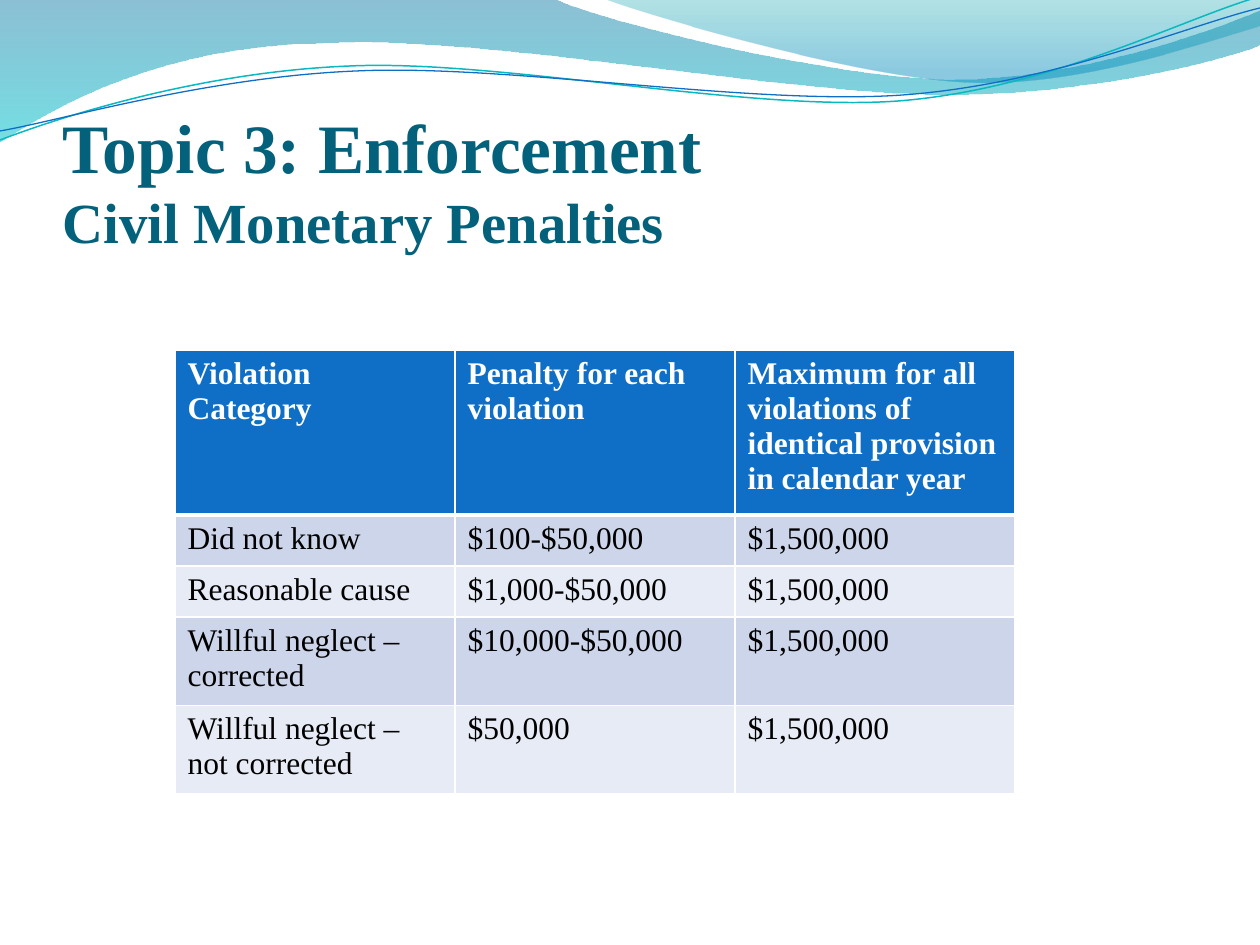
import pptx
import pptx.dml.color
import pptx.enum.text
import pptx.oxml
import pptx.oxml.ns
import pptx.util

RGBColor = pptx.dml.color.RGBColor
qn = pptx.oxml.ns.qn
NAMESPACE = pptx.oxml.ns.nsdecls("a")

WHITE = RGBColor(0xFF, 0xFF, 0xFF)
BLACK = RGBColor(0x00, 0x00, 0x00)
TITLE_TEAL = RGBColor(0x04, 0x61, 0x7B)
HEADER_BLUE = RGBColor(0x0F, 0x6F, 0xC6)
BAND_DARK = RGBColor(0xCC, 0xD5, 0xEA)
BAND_LIGHT = RGBColor(0xE7, 0xEB, 0xF5)
LINE_TEAL = RGBColor(0x0A, 0xB8, 0xBF)
WAVE_TOP = RGBColor(0x00, 0x74, 0xA1)
WAVE_BOTTOM = RGBColor(0x00, 0xC6, 0xCF)
CREST_TOP = RGBColor(0x00, 0xA1, 0xA9)
CREST_BOTTOM = RGBColor(0x00, 0x8B, 0xBF)

FONT = "Times New Roman"
EMU_PER_PX = 914400 / 126


def px(length):
    return pptx.util.Emu(round(length * EMU_PER_PX))


class SlideBuilder:
    def __init__(self, slide):
        self.slide = slide

    def outline(self, start, segments, close):
        """Segments hold one point for a straight line, three for a cubic curve."""
        builder = self.slide.shapes.build_freeform(*start, scale=EMU_PER_PX)
        for segment in segments:
            builder.add_line_segments(segment, close=False)
        if close:
            builder.add_line_segments([], close=True)
        shape = builder.convert_to_shape()
        shape.shadow.inherit = False
        steps = iter(list(shape._element.spPr.iter(qn("a:lnTo"))))
        for segment in segments:
            first, *others = [next(steps) for _ in segment]
            if others:
                curve = pptx.oxml.parse_xml(f"<a:cubicBezTo {NAMESPACE}/>")
                first.addprevious(curve)
                for step in (first, *others):
                    curve.append(step[0])
                    step.getparent().remove(step)
        return shape

    def wave(self, start, segments, stops):
        """Filled outline; stops are (position, colour, opacity percent)."""
        shape = self.outline(start, segments, True)
        shape.line.fill.background()
        shape.fill.gradient()
        shape.fill.gradient_angle = 270
        for stop, (position, color, _) in zip(shape.fill.gradient_stops, stops):
            stop.position = position
            stop.color.rgb = color
        colors = list(shape._element.spPr.iter(qn("a:srgbClr")))
        for element, (_, _, opacity) in zip(colors, stops):
            element.append(pptx.oxml.parse_xml(f'<a:alpha {NAMESPACE} val="{opacity * 1000}"/>'))

    def curve(self, start, segments, color, width):
        shape = self.outline(start, segments, False)
        shape.fill.background()
        shape.line.color.rgb = color
        shape.line.width = pptx.util.Pt(width)

    def style(self, font, size, color, bold):
        font.name = FONT
        font.size = pptx.util.Pt(size)
        font.color.rgb = color
        font.bold = bold

    def title(self, left, top, width, height, lines):
        """One paragraph with a line break between the (text, size) lines."""
        box = self.slide.shapes.add_textbox(px(left), px(top), px(width), px(height))
        frame = box.text_frame
        frame.word_wrap = True
        frame.vertical_anchor = pptx.enum.text.MSO_ANCHOR.BOTTOM
        frame.margin_left = frame.margin_right = frame.margin_bottom = 0
        frame.margin_top = px(6)
        paragraph = frame.paragraphs[0]
        for index, (text, size) in enumerate(lines):
            if index:
                paragraph.add_line_break()
            run = paragraph.add_run()
            run.text = text
            self.style(run.font, size, TITLE_TEAL, True)

    def table(self, left, top, column_width, row_heights, rows):
        frame = self.slide.shapes.add_table(
            len(rows), len(rows[0]), px(left), px(top),
            px(column_width * len(rows[0])), px(sum(row_heights)))
        table = frame.table
        for column in table.columns:
            column.width = px(column_width)
        for index, (row, height) in enumerate(zip(table.rows, row_heights)):
            row.height = px(height)
            header = index == 0
            fill = HEADER_BLUE if header else (BAND_LIGHT, BAND_DARK)[index % 2]
            for cell, text in zip(row.cells, rows[index]):
                # Row heights follow the run font, so it is set on the run
                run = cell.text_frame.paragraphs[0].add_run()
                run.text = text
                self.style(run.font, 18, WHITE if header else BLACK, header)
                self.borders(cell, 3 if index == 1 else 1, 3 if header else 1)
                cell.fill.solid()
                cell.fill.fore_color.rgb = fill

    def borders(self, cell, top, bottom):
        properties = cell._tc.get_or_add_tcPr()
        for side, width in (("L", 1), ("R", 1), ("T", top), ("B", bottom)):
            properties.append(pptx.oxml.parse_xml(
                f'<a:ln{side} {NAMESPACE} w="{pptx.util.Pt(width)}">'
                f'<a:solidFill><a:srgbClr val="{WHITE}"/></a:solidFill></a:ln{side}>'))


def main():
    presentation = pptx.Presentation()
    presentation.slide_width = px(1260)
    presentation.slide_height = px(945)
    builder = SlideBuilder(presentation.slides.add_slide(presentation.slide_layouts[6]))

    # Wave band across the top
    builder.wave(
        (-1, -1),
        [[(554, -1)],
         [(600, 21), (837, 79), (955, 79)],
         [(1075, 79), (1207, 33), (1260, 11)],
         [(1261, 45)],
         [(1239, 55), (1096, 96), (940, 94)],
         [(784, 94), (481, 35), (324, 43)],
         [(163, 45), (58, 105), (-1, 142)]],
        [(0, WAVE_TOP, 45), (1, WAVE_BOTTOM, 55)])
    builder.wave(
        (604, -1),
        [[(641, 14), (859, 78), (969, 82)],
         [(1079, 87), (1211, 40), (1260, 26)],
         [(1260, 0)]],
        [(0, CREST_TOP, 30), (0.8, CREST_BOTTOM, 45)])
    builder.curve(
        (0, 140),
        [[(60, 117), (199, 72), (349, 66)],
         [(498, 59), (747, 112), (898, 101)],
         [(1050, 89), (1182, 19), (1258, -3)]],
        LINE_TEAL, 0.85)
    builder.curve(
        (0, 131),
        [[(59, 121), (207, 77), (357, 71)],
         [(508, 64), (752, 106), (903, 95)],
         [(1053, 84), (1186, 26), (1260, 8)]],
        HEADER_BLUE, 0.75)

    # Title
    builder.title(63, 97, 1134, 158,
                  [("Topic 3: Enforcement", 39.6), ("Civil Monetary Penalties", 32.4)])

    # Penalty table
    maximum = "$1,500,000"
    builder.table(175, 350, 280, [165, 51, 51, 51, 51], [
        ("Violation Category", "Penalty for each violation",
         "Maximum for all violations of identical provision in calendar year"),
        ("Did not know", "$100-$50,000", maximum),
        ("Reasonable cause", "$1,000-$50,000", maximum),
        ("Willful neglect – corrected", "$10,000-$50,000", maximum),
        ("Willful neglect – not corrected", "$50,000", maximum),
    ])

    presentation.save("out.pptx")


if __name__ == "__main__":
    main()
